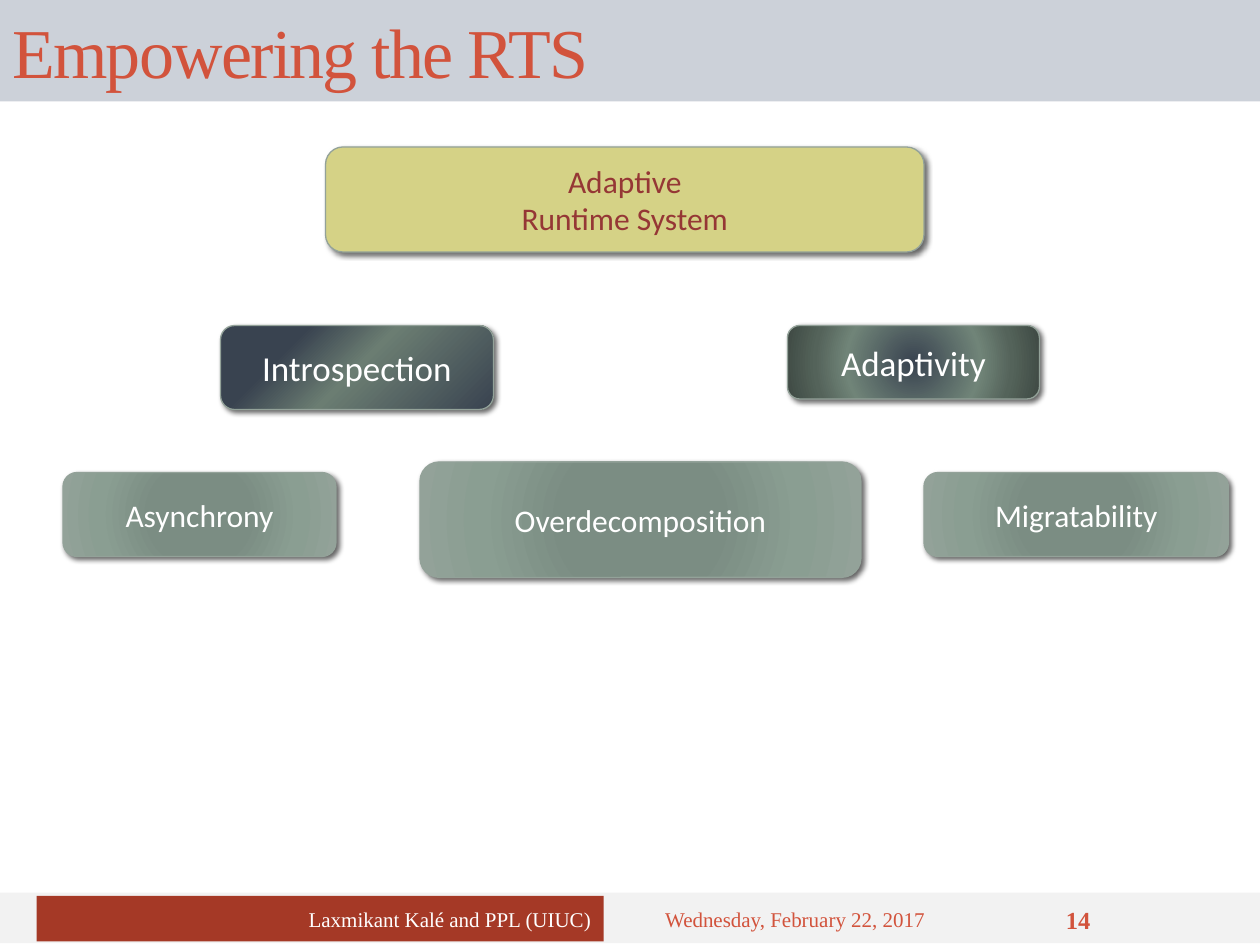
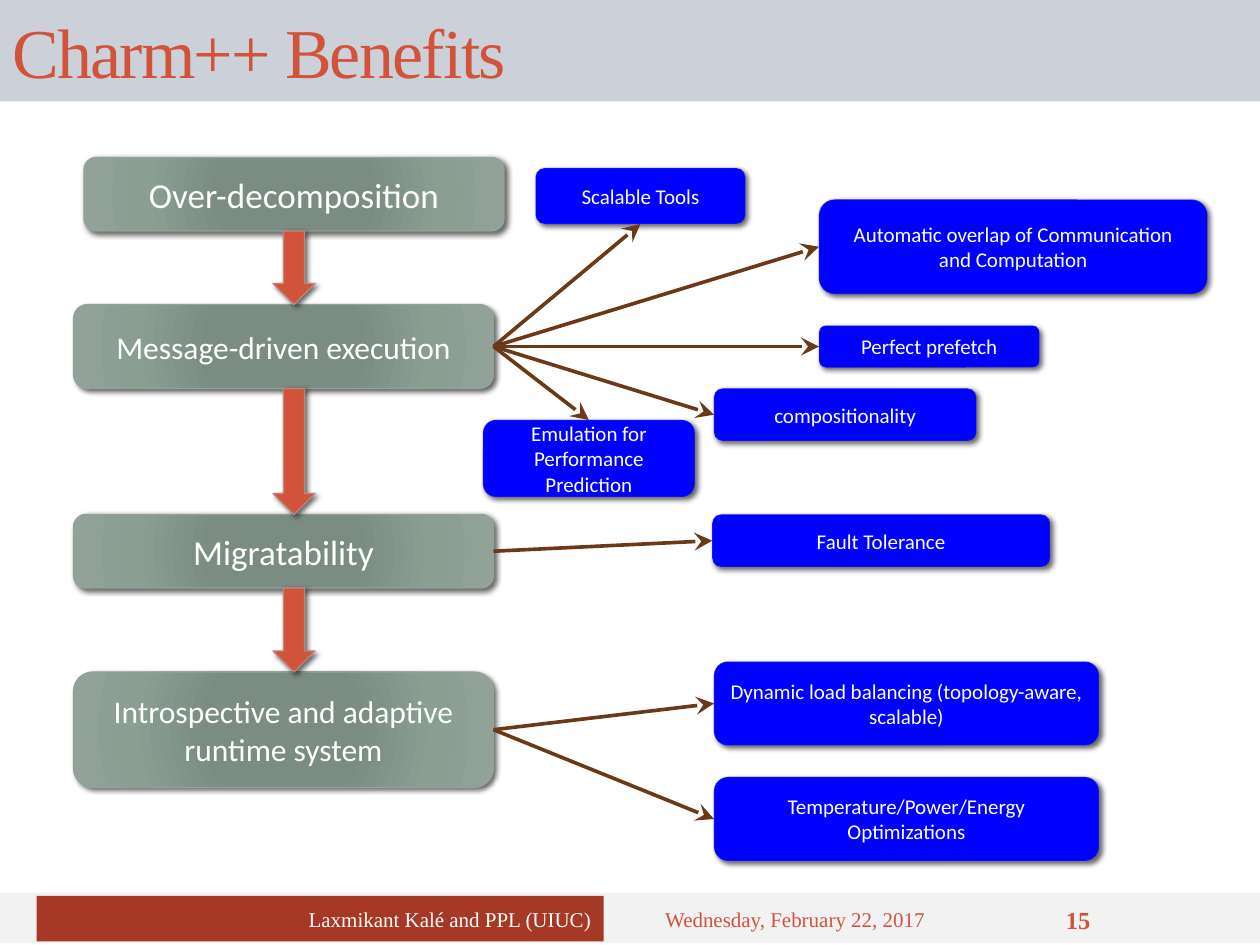
from dataclasses import dataclass

from pptx import Presentation
from pptx.dml.color import RGBColor
from pptx.enum.shapes import MSO_CONNECTOR, MSO_SHAPE
from pptx.enum.text import MSO_ANCHOR as Anchor, PP_ALIGN as Align
from pptx.oxml import parse_xml
from pptx.oxml.ns import nsdecls, qn
from pptx.util import Pt


@dataclass(frozen=True)
class Theme:
    serif: str = "Times New Roman"
    sans: str = "Calibri"
    white: str = "FFFFFF"
    accent: str = "D2533C"
    title_band: str = "CCD1D9"
    footer_band: str = "F2F2F2"
    footer_box: str = "A53926"
    sage_line: str = "93A299"
    khaki: str = "D5D286"
    maroon: str = "953735"
    blue: str = "0000FF"
    blue_line: str = "AD8F67"
    arrow_line: str = "BD867C"
    link: str = "6B3917"
    title_size: int = 40
    big: int = 20
    body: int = 18
    number_size: int = 14
    small: int = 12


@dataclass(frozen=True)
class Radial:
    """Circular gradient: (percent, colour) stops and the focus insets l, t, r, b."""
    stops: tuple
    focus: tuple


THEME = Theme()
SAGE = Radial(((0, "7B8E82"), (34, "7B8D83"), (70, "8A9E92"), (100, "93A299")),
              (100, 100, 100, 100))
SLATE_CORNER = Radial(((0, "394350"), (50, "6B7D72"), (75, "394350")),
                      (100, 100, 0, 0))
SLATE_CENTRE = Radial(((0, "394350"), (51, "708478"), (75, "54635A"), (100, "3E4943")),
                      (50, 50, 50, 50))
TOP, LEFT, BOTTOM, RIGHT = range(4)  # connection sites of a box


def rgb(value):
    return RGBColor.from_string(value)


class Deck:
    def __init__(self, theme):
        self.t = theme
        self.prs = Presentation()
        self.prs.slide_width, self.prs.slide_height = Pt(720), Pt(540)
        self.s = None

    def slide(self, title, number):
        t = self.t
        self.s = self.prs.slides.add_slide(self.prs.slide_layouts[6])
        self.shape(MSO_SHAPE.RECTANGLE, (0, 510, 720, 29), t.footer_band)
        band = self.shape(MSO_SHAPE.RECTANGLE, (0, 0, 720, 58), t.title_band)
        self.set_text(band, title, t.title_size, t.accent, t.serif, Align.LEFT)
        for r in band.text_frame.paragraphs[0].runs:
            r._r.get_or_add_rPr().set("spc", "-100")
        author = self.shape(MSO_SHAPE.RECTANGLE, (21, 512, 324, 26), t.footer_box)
        self.set_text(author, "Laxmikant Kalé and PPL (UIUC)", t.small, t.white,
                      t.serif, Align.RIGHT)
        self.label("Wednesday, February 22, 2017", (373, 512, 215, 26), t.small)
        self.label(str(number), (602, 512.5, 97, 26), t.number_size, bold=True)

    def set_text(self, shape, text, size, color, font, align, bold=False):
        tf = shape.text_frame
        tf.word_wrap = True
        tf.vertical_anchor = Anchor.MIDDLE
        tf.text = text
        for p in tf.paragraphs:
            p.alignment = align
            p.font.size, p.font.name, p.font.bold = Pt(size), font, bold
            p.font.color.rgb = rgb(color)

    def label(self, text, box, size, bold=False):
        sp = self.s.shapes.add_textbox(*map(Pt, box))
        self.set_text(sp, text, size, self.t.accent, self.t.serif, Align.LEFT, bold)

    def shape(self, kind, box, fill, line=None):
        sp = self.s.shapes.add_shape(kind, *map(Pt, box))
        sp.shadow.inherit = False
        if isinstance(fill, Radial):
            self.gradient(sp, fill)
        else:
            sp.fill.solid()
            sp.fill.fore_color.rgb = rgb(fill)
        if line:
            sp.line.color.rgb = rgb(line)
            sp.line.width = Pt(0.75)
        else:
            sp.line.fill.background()
        return sp

    def gradient(self, sp, radial):
        stops = "".join(
            f'<a:gs pos="{pos * 1000}"><a:srgbClr val="{color}"/></a:gs>'
            for pos, color in radial.stops)
        focus = " ".join(f'{side}="{inset * 1000}"'
                         for side, inset in zip("ltrb", radial.focus))
        sp._element.spPr.find(qn("a:prstGeom")).addnext(parse_xml(
            f'<a:gradFill {nsdecls("a")} rotWithShape="1"><a:gsLst>{stops}</a:gsLst>'
            f'<a:path path="circle"><a:fillToRect {focus}/></a:path></a:gradFill>'))

    def raised(self, kind, box, fill, line):
        """Add a shape with a soft shadow at the lower right."""
        sp = self.shape(kind, box, fill, line)
        sp._element.spPr.find(qn("a:effectLst")).append(parse_xml(
            f'<a:outerShdw {nsdecls("a")} blurRad="{Pt(3)}" dist="{Pt(2)}" '
            'dir="2700000" algn="tl" rotWithShape="0"><a:srgbClr val="000000">'
            '<a:alpha val="60000"/></a:srgbClr></a:outerShdw>'))
        return sp

    def box(self, text, box, size, fill=SAGE, line=None, color=None):
        t = self.t
        sp = self.raised(MSO_SHAPE.ROUNDED_RECTANGLE, box, fill, line or t.sage_line)
        self.set_text(sp, text, size, color or t.white, t.sans, Align.CENTER)
        return sp

    def benefit(self, text, box):
        t = self.t
        sp = self.box(text, box, t.small, t.blue, t.blue_line)
        color = sp._element.spPr.find(qn("a:ln")).find(qn("a:solidFill"))[0]
        color.append(parse_xml(f'<a:alpha {nsdecls("a")} val="15000"/>'))
        return sp

    def down_arrow(self, top, bottom):
        self.raised(MSO_SHAPE.DOWN_ARROW, (156, top, 24, bottom - top),
                    self.t.accent, self.t.arrow_line)

    def link(self, source, target, site):
        """Draw an arrow from the right side of source to a side of target."""
        c = self.s.shapes.add_connector(MSO_CONNECTOR.STRAIGHT, 0, 0, 0, 0)
        c.begin_connect(source, RIGHT)
        c.end_connect(target, site)
        c.line.color.rgb = rgb(self.t.link)
        c.line.width = Pt(2.08)
        c._element.spPr.find(qn("a:ln")).append(parse_xml(
            f'<a:tailEnd {nsdecls("a")} type="stealth" w="lg" len="lg"/>'))
        c._element.spPr.append(parse_xml(f'<a:effectLst {nsdecls("a")}/>'))


def empowering(d):
    t = d.t
    d.slide("Empowering the RTS", 14)
    d.box("Asynchrony", (36, 270, 156, 48), t.body)
    d.box("Overdecomposition", (240, 264, 252, 66), t.body)
    d.box("Migratability", (528, 270, 174, 48), t.body)
    d.box("Adaptive\nRuntime System", (186, 84, 342, 60), t.body, t.khaki, color=t.maroon)
    d.box("Introspection", (126, 186, 156, 48), t.big, SLATE_CORNER)
    d.box("Adaptivity", (450, 186, 144, 42), t.big, SLATE_CENTRE)


def benefits(d):
    t = d.t
    d.slide("Charm++ Benefits", 15)
    # Stage: text, left, top, height, text size, benefits (text, box, site reached)
    stages = [
        ("Over-decomposition", 48, 90, 42, t.big, []),
        ("Message-driven execution", 42, 174, 48, t.body, [
            ("Scalable Tools", (306, 96, 120, 32), BOTTOM),
            ("Automatic overlap of Communication and Computation",
             (468, 114, 222, 54), LEFT),
            ("Perfect prefetch", (468, 186, 126, 24), LEFT),
            ("compositionality", (408, 222, 150, 30), LEFT),
            ("Emulation for Performance Prediction", (276, 240, 121, 44), TOP)]),
        ("Migratability", 42, 294, 42, t.big, [
            ("Fault Tolerance", (407, 294, 193, 30), LEFT)]),
        ("Introspective and adaptive runtime system", 42, 384, 66, t.body, [
            ("Dynamic load balancing (topology-aware, scalable)",
             (408, 378, 220, 48), LEFT),
            ("Temperature/Power/Energy Optimizations", (408, 444, 220, 48), LEFT)]),
    ]
    previous_bottom = None
    for text, left, top, height, size, gains in stages:
        stage = d.box(text, (left, top, 240, height), size)
        if previous_bottom:
            d.down_arrow(previous_bottom, top)
        previous_bottom = top + height
        for gain, box, site in gains:
            d.link(stage, d.benefit(gain, box), site)


def main():
    d = Deck(THEME)
    empowering(d)
    benefits(d)
    d.prs.save("out.pptx")


if __name__ == "__main__":
    main()
